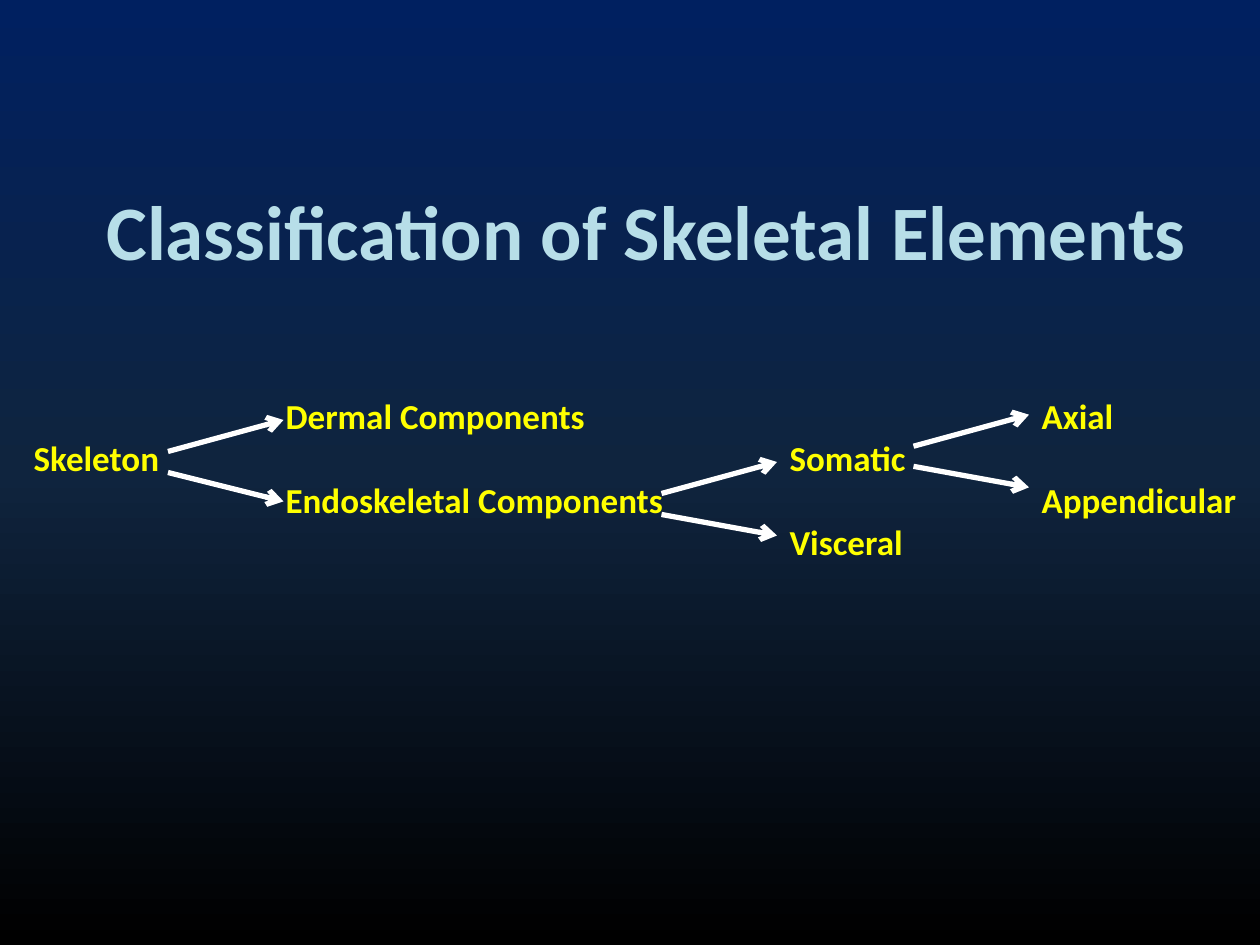
from copy import deepcopy

from pptx import Presentation
from pptx.dml.color import RGBColor
from pptx.enum.shapes import MSO_CONNECTOR
from pptx.enum.text import MSO_ANCHOR, MSO_AUTO_SIZE, PP_ALIGN
from pptx.oxml.ns import qn
from pptx.util import Pt
from lxml import etree

LINE = MSO_CONNECTOR.STRAIGHT
TOP, LEFT, FIXED = MSO_ANCHOR.TOP, PP_ALIGN.LEFT, MSO_AUTO_SIZE.NONE

NAVY = RGBColor(0x00, 0x20, 0x60)
DUSK = RGBColor(0x0F, 0x24, 0x3E)
BLACK = RGBColor(0x00, 0x00, 0x00)
WHITE = RGBColor(0xFF, 0xFF, 0xFF)
YELLOW = RGBColor(0xFF, 0xFF, 0x00)
PALE = RGBColor(0xB7, 0xDE, 0xE8)


def write(shape, text, size, color):
    """Fill a shape with one bold line, set tight to its top left corner."""
    frame = shape.text_frame
    frame.text = text
    frame.word_wrap = True
    frame.auto_size = FIXED
    frame.vertical_anchor = TOP
    frame.margin_left = frame.margin_right = 0
    frame.margin_top = frame.margin_bottom = 0
    para = frame.paragraphs[0]
    para.alignment = LEFT
    font = para.runs[0].font
    font.name, font.size, font.bold = "Calibri", Pt(size), True
    font.color.rgb = color


deck = Presentation()
deck.slide_width, deck.slide_height = Pt(720), Pt(540)
slide = deck.slides.add_slide(deck.slide_layouts[5])

# Background: navy at the top to black at the bottom
fill = slide.background.fill
fill.gradient()
fill.gradient_angle = 270
stops = next(slide.element.iter(qn("a:gsLst")))
stops.append(deepcopy(stops[0]))
for stop, color, place in zip(fill.gradient_stops, (NAVY, DUSK, BLACK), (0, 0.5, 1)):
    stop.color.rgb = color
    stop.position = place

title = slide.shapes.title
title.left, title.top, title.width, title.height = Pt(60.8), Pt(105.1), Pt(630), Pt(56)
write(title, "Classification of Skeletal Elements", 44, PALE)

# Terms by column (in inches of indent, 72 pt each) and row
terms = [
    ("Dermal Components", 2, 0),
    ("Axial", 8, 0),
    ("Skeleton", 0, 1),
    ("Somatic", 6, 1),
    ("Endoskeletal Components", 2, 2),
    ("Appendicular", 8, 2),
    ("Visceral", 6, 3),
]
widths = {0: 76, 2: 226, 6: 72, 8: 122}
for term, col, row in terms:
    label = slide.shapes.add_textbox(
        Pt(19.2 + 72 * col), Pt(225.5 + 24 * row), Pt(widths[col]), Pt(24))
    write(label, term, 20, YELLOW)

# Each fork: left edge, then start and end height of its two arrows
forks = [
    (96, (258, 240), (270, 286.5)),
    (378, (282, 264), (294, 306)),
    (522, (255, 237), (266.5, 278.5)),
]
for x, *arms in forks:
    for start, end in arms:
        arrow = slide.shapes.add_connector(LINE, Pt(x), Pt(start), Pt(x + 66), Pt(end))
        arrow.line.color.rgb = WHITE
        arrow.line.width = Pt(3)
        etree.SubElement(arrow.line._get_or_add_ln(), qn("a:tailEnd"), type="arrow")
        etree.SubElement(arrow._element.spPr, qn("a:effectLst"))

deck.save("out.pptx")
